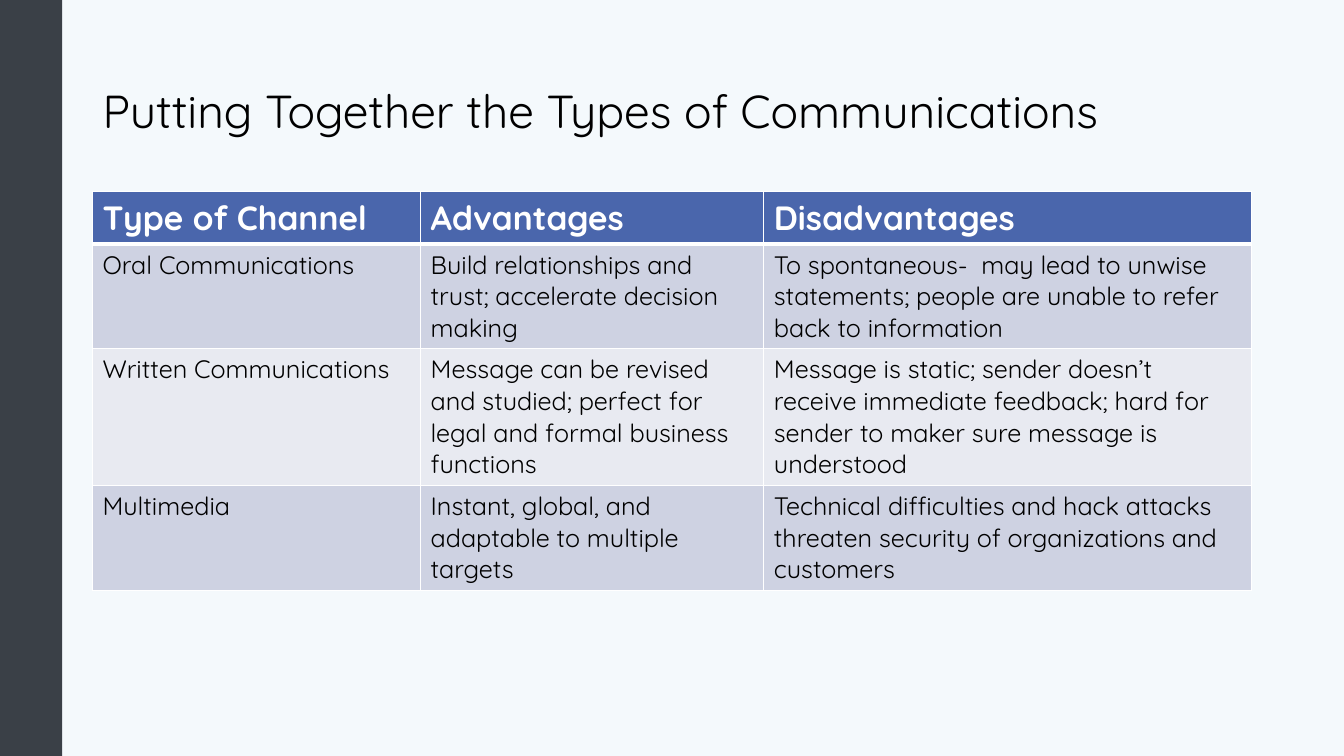
from dataclasses import dataclass

from lxml import etree
from pptx import Presentation
from pptx.dml.color import RGBColor
from pptx.enum.shapes import MSO_SHAPE
from pptx.enum.text import MSO_ANCHOR, PP_ALIGN
from pptx.oxml.ns import qn
from pptx.util import Cm, Pt

RECTANGLE = MSO_SHAPE.RECTANGLE
MIDDLE = MSO_ANCHOR.MIDDLE
TOP = MSO_ANCHOR.TOP
LEFT = PP_ALIGN.LEFT
TITLE_ONLY = 5


@dataclass(frozen=True)
class Theme:
    font: str = "Quicksand"
    background: str = "F4F9FC"
    sidebar: str = "3A4047"
    text: str = "000000"
    header_text: str = "FFFFFF"
    header_fill: str = "4A66AC"
    bands: tuple = ("CED2E2", "E8EAF1")
    border: str = "FFFFFF"
    thin_line: int = 1
    thick_line: int = 3
    title_size: int = 33
    header_size: int = 24
    body_size: int = 18


THEME = Theme()
TITLE = "Putting Together the Types of Communications"
CHANNELS = [
    ("Type of Channel", "Advantages", "Disadvantages"),
    (
        "Oral Communications",
        "Build relationships and trust; accelerate decision making",
        "To spontaneous-  may lead to unwise statements; people are unable to refer back to information",
    ),
    (
        "Written Communications",
        "Message can be revised and studied; perfect for legal and formal business functions",
        "Message is static; sender doesn’t receive immediate feedback; hard for sender to maker sure message is understood",
    ),
    (
        "Multimedia",
        "Instant, global, and adaptable to multiple targets",
        "Technical difficulties and hack attacks threaten security of organizations and customers",
    ),
]
COLUMN_WIDTHS = (8.27, 8.65, 12.29)
ROW_HEIGHTS = (1.28, 2.62, 3.44, 2.62)


def color(value):
    return RGBColor.from_string(value)


def paint(fill, value):
    fill.solid()
    fill.fore_color.rgb = color(value)


def write(frame, text, size, ink, bold=False):
    frame.word_wrap = True
    para = frame.paragraphs[0]
    para.alignment = LEFT
    span = para.add_run()
    span.text = text
    span.font.name = THEME.font
    span.font.size = Pt(size)
    span.font.bold = bold
    span.font.color.rgb = color(ink)
    return para


def add_sidebar(page, height):
    bar = page.shapes.add_shape(RECTANGLE, 0, 0, Cm(1.57), height)
    bar.shadow.inherit = False
    bar.line.fill.background()
    paint(bar.fill, THEME.sidebar)


def add_title(page):
    box = page.shapes.title
    box.left, box.top, box.width, box.height = Cm(2.33), Cm(1.02), Cm(29.21), Cm(3.68)
    box.text_frame.vertical_anchor = MIDDLE
    para = write(box.text_frame, TITLE, THEME.title_size, THEME.text)
    para.line_spacing = 0.9


def set_borders(cell, bottom_width):
    properties = cell._tc.get_or_add_tcPr()
    widths = {"a:lnL": THEME.thin_line, "a:lnR": THEME.thin_line,
              "a:lnT": THEME.thin_line, "a:lnB": bottom_width}
    for position, (tag, width) in enumerate(widths.items()):
        line = etree.Element(qn(tag), w=str(Pt(width)))
        fill = etree.SubElement(line, qn("a:solidFill"))
        etree.SubElement(fill, qn("a:srgbClr"), val=THEME.border)
        properties.insert(position, line)


def fill_cell(cell, text, row):
    cell.vertical_anchor = TOP
    if row == 0:
        write(cell.text_frame, text, THEME.header_size, THEME.header_text, bold=True)
        paint(cell.fill, THEME.header_fill)
        set_borders(cell, THEME.thick_line)
    else:
        write(cell.text_frame, text, THEME.body_size, THEME.text)
        paint(cell.fill, THEME.bands[(row - 1) % len(THEME.bands)])
        set_borders(cell, THEME.thin_line)


def add_channel_table(page):
    table = page.shapes.add_table(
        len(CHANNELS), len(COLUMN_WIDTHS), Cm(2.33), Cm(4.83),
        Cm(sum(COLUMN_WIDTHS)), Cm(sum(ROW_HEIGHTS)),
    ).table
    for column, width in zip(table.columns, COLUMN_WIDTHS):
        column.width = Cm(width)
    for row, (texts, height) in enumerate(zip(CHANNELS, ROW_HEIGHTS)):
        table.rows[row].height = Cm(height)
        for column, text in enumerate(texts):
            fill_cell(table.cell(row, column), text, row)


def main():
    deck = Presentation()
    deck.slide_width, deck.slide_height = Cm(33.87), Cm(19.05)
    page = deck.slides.add_slide(deck.slide_layouts[TITLE_ONLY])
    paint(page.background.fill, THEME.background)
    add_sidebar(page, deck.slide_height)
    add_title(page)
    add_channel_table(page)
    deck.save("out.pptx")


if __name__ == "__main__":
    main()
